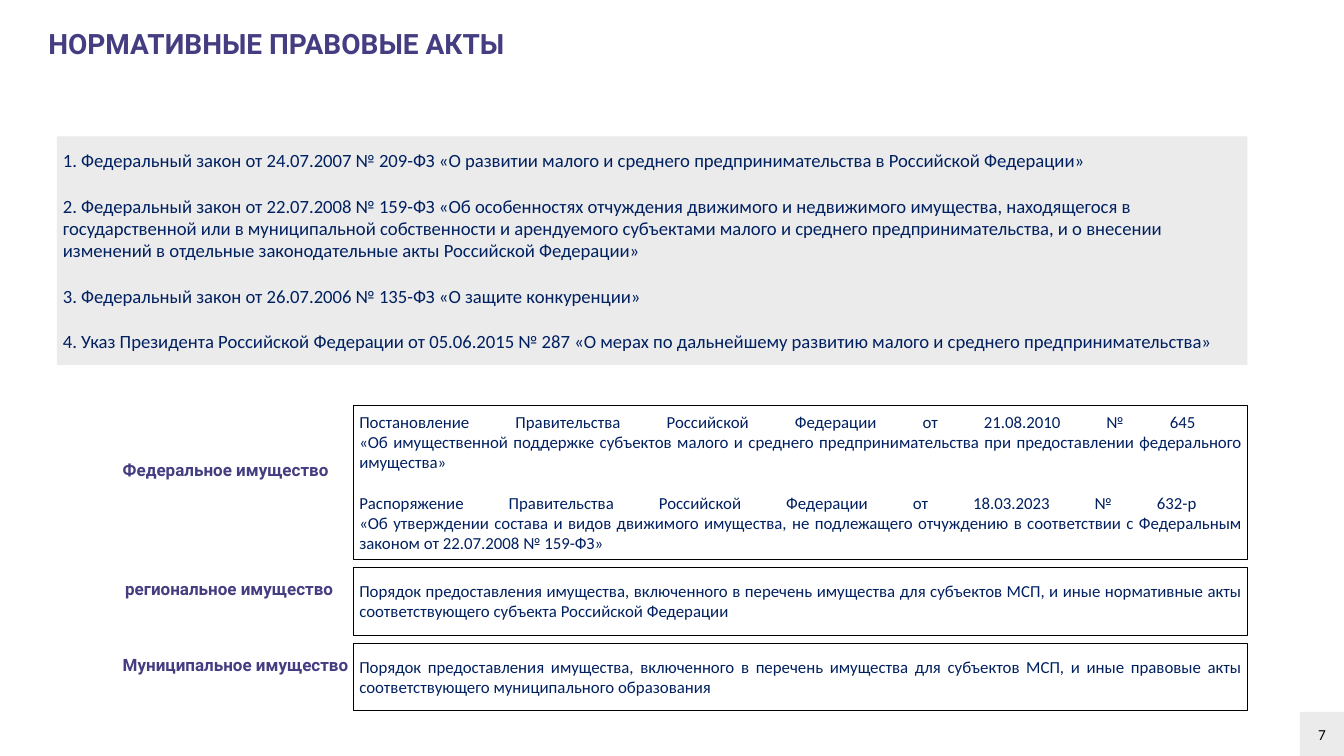
from pptx import Presentation
from pptx.dml.color import RGBColor
from pptx.enum.shapes import MSO_SHAPE
from pptx.enum.text import MSO_ANCHOR, PP_ALIGN
from pptx.util import Inches, Pt

RECTANGLE = MSO_SHAPE.RECTANGLE
TOP, MIDDLE = MSO_ANCHOR.TOP, MSO_ANCHOR.MIDDLE
LEFT, CENTER, JUSTIFY = PP_ALIGN.LEFT, PP_ALIGN.CENTER, PP_ALIGN.JUSTIFY

# Content
TITLE = "НОРМАТИВНЫЕ ПРАВОВЫЕ АКТЫ"
LAWS = [
    "1. Федеральный закон от 24.07.2007 № 209-ФЗ «О развитии малого и среднего "
    "предпринимательства в Российской Федерации»",
    "2. Федеральный закон от 22.07.2008 № 159-ФЗ «Об особенностях отчуждения движимого и "
    "недвижимого имущества, находящегося в государственной или в муниципальной собственности "
    "и арендуемого субъектами малого и среднего предпринимательства, и о внесении изменений "
    "в отдельные законодательные акты Российской Федерации»",
    "3. Федеральный закон от 26.07.2006 № 135-ФЗ «О защите конкуренции»",
    "4. Указ Президента Российской Федерации от 05.06.2015 № 287 «О мерах по дальнейшему "
    "развитию малого и среднего предпринимательства»",
]
# Each level: label, label left, label width, row height, acts
LEVELS = [
    ("Федеральное имущество", 1.91, 3.71, 2.52, [
        "Постановление Правительства Российской Федерации от 21.08.2010 № 645 \v"
        "«Об имущественной поддержке субъектов малого и среднего предпринимательства "
        "при предоставлении федерального имущества»",
        "Распоряжение Правительства Российской Федерации от 18.03.2023 № 632-р \v"
        "«Об утверждении состава и видов движимого имущества, не подлежащего отчуждению "
        "в соответствии с Федеральным законом от 22.07.2008 № 159-ФЗ»",
    ]),
    ("региональное имущество", 1.95, 3.67, 1.11, [
        "Порядок предоставления имущества, включенного в перечень имущества для субъектов МСП, "
        "и иные нормативные акты соответствующего субъекта Российской Федерации",
    ]),
    ("Муниципальное имущество", 1.91, 4.17, 1.11, [
        "Порядок предоставления имущества, включенного в перечень имущества для субъектов МСП, "
        "и иные правовые акты соответствующего муниципального образования",
    ]),
]
PAGE_NUMBER = "7"

# Formats
PURPLE = RGBColor(0x44, 0x3D, 0x81)
NAVY = RGBColor(0x00, 0x20, 0x60)
GREY = RGBColor(0xEB, 0xEB, 0xEB)
WHITE = RGBColor(0xFF, 0xFF, 0xFF)
BLACK = RGBColor(0x00, 0x00, 0x00)
TITLE_FONT = {"name": "Roboto", "size": Pt(33), "bold": True, "color": PURPLE}
LABEL_FONT = {**TITLE_FONT, "size": Pt(20)}
LAW_FONT = {"name": "Calibri", "size": Pt(22), "color": NAVY}
ACT_FONT = {**LAW_FONT, "size": Pt(19.8)}
NUMBER_FONT = {**LAW_FONT, "size": Pt(18), "color": BLACK}

# Layout in inches
WIDTH, HEIGHT = 21.99, 12.37
RIGHT_EDGE = 20.41
LAWS_LEFT, LAWS_TOP, LAWS_HEIGHT = 0.93, 2.23, 3.74
ACTS_LEFT, ACTS_TOP, ROW_GAP = 5.78, 6.63, 0.13
LABEL_HEIGHT, LABEL_RISE = 0.77, 0.03
NUMBER_SIDE = 0.72
LINE_HEIGHT = 1.22


def write(shape, texts, font, align=LEFT, anchor=TOP):
    frame = shape.text_frame
    frame.word_wrap = True
    frame.vertical_anchor = anchor
    for index, text in enumerate(texts):
        para = frame.add_paragraph() if index else frame.paragraphs[0]
        para.text = text
        para.alignment = align
        if index:
            para.space_before = Pt(round(font["size"].pt * LINE_HEIGHT, 1))
        for span in para.runs:
            for key, value in font.items():
                if key == "color":
                    span.font.color.rgb = value
                else:
                    setattr(span.font, key, value)


def add_panel(page, place, fill, line=None):
    panel = page.shapes.add_shape(RECTANGLE, *map(Inches, place))
    panel.shadow.inherit = False
    panel.fill.solid()
    panel.fill.fore_color.rgb = fill
    if line is None:
        panel.line.fill.background()
    else:
        panel.line.color.rgb = line
        panel.line.width = Pt(1)
    return panel


def main():
    deck = Presentation()
    deck.slide_width, deck.slide_height = Inches(WIDTH), Inches(HEIGHT)
    page = deck.slides.add_slide(deck.slide_layouts[5])

    # Title
    title = page.shapes.title
    title.left, title.top, title.width, title.height = map(Inches, (0.69, 0.45, 16.03, 1.1))
    write(title, [TITLE], TITLE_FONT)
    title.text_frame.paragraphs[0].line_spacing = 0.9

    # Federal laws
    place = (LAWS_LEFT, LAWS_TOP, RIGHT_EDGE - LAWS_LEFT, LAWS_HEIGHT)
    write(add_panel(page, place, GREY), LAWS, LAW_FONT, anchor=MIDDLE)

    # Acts by level of ownership, each label centred on its row
    top = ACTS_TOP
    for label, left, width, height, acts in LEVELS:
        place = (ACTS_LEFT, top, RIGHT_EDGE - ACTS_LEFT, height)
        write(add_panel(page, place, WHITE, BLACK), acts, ACT_FONT, JUSTIFY, MIDDLE)
        label_top = top + (height - LABEL_HEIGHT) / 2 - LABEL_RISE
        box = page.shapes.add_textbox(*map(Inches, (left, label_top, width, LABEL_HEIGHT)))
        write(box, [label], LABEL_FONT, JUSTIFY)
        top += height + ROW_GAP

    # Page number in the corner
    place = (WIDTH - NUMBER_SIDE, HEIGHT - NUMBER_SIDE, NUMBER_SIDE, NUMBER_SIDE)
    write(add_panel(page, place, GREY), [PAGE_NUMBER], NUMBER_FONT, CENTER, MIDDLE)

    deck.save("out.pptx")


if __name__ == "__main__":
    main()
